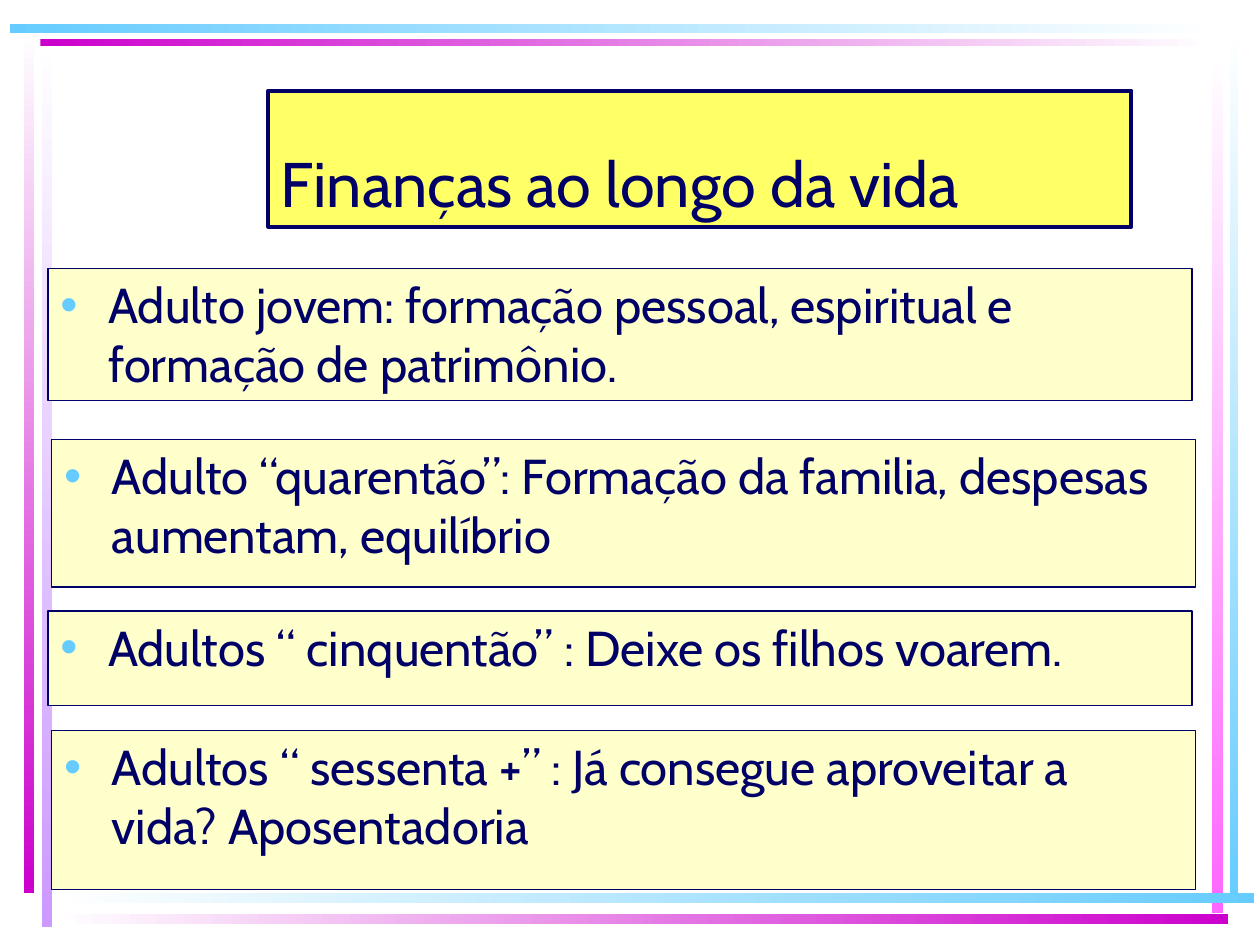
import pptx
import pptx.dml.color
import pptx.enum.shapes
import pptx.enum.text
import pptx.util
from lxml import etree
from pptx.oxml.ns import qn
from pptx.util import Inches

COLORS = {
    "text": "000066",
    "title_fill": "FFFF66",
    "box_fill": "FFFFCC",
    "sky": "66CCFF",
    "magenta": "CC00CC",
    "pink": "FF66FF",
    "lavender": "CC99FF",
    "white": "FFFFFF",
}
FONT = "Cabin"
DOWN, RIGHT = 270, 0

# left, top, width, height, gradient direction, start colour, end colour
BARS = [
    (0.33, 0.28, 0.08, 7.08, DOWN, "white", "lavender"),
    (0.19, 0.25, 0.08, 6.84, DOWN, "white", "magenta"),
    (9.76, 0.24, 0.07, 6.93, DOWN, "white", "sky"),
    (9.62, 0.42, 0.09, 6.83, DOWN, "white", "pink"),
    (0.45, 7.09, 9.5, 0.08, RIGHT, "white", "sky"),
    (0.45, 7.25, 9.3, 0.08, RIGHT, "white", "magenta"),
    (0.32, 0.31, 9.32, 0.06, RIGHT, "magenta", "white"),
    (0.08, 0.19, 9.56, 0.07, RIGHT, "sky", "white"),
]

TITLE_BOX = (2.13, 0.72, 6.85, 1.08)
STAGES = [
    ((0.38, 2.13, 9.08, 1.05),
     "Adulto jovem: formação pessoal, espiritual e formação de patrimônio."),
    ((0.41, 3.49, 9.08, 1.17),
     "Adulto “quarentão”: Formação da familia, despesas aumentam, equilíbrio"),
    ((0.38, 4.85, 9.08, 0.75),
     "Adultos “ cinquentão” : Deixe os filhos voarem."),
    ((0.41, 5.8, 9.08, 1.26),
     "Adultos “ sessenta +” : Já consegue aproveitar a vida? Aposentadoria"),
]


def rgb(name):
    return pptx.dml.color.RGBColor.from_string(COLORS[name])


def apply(target, values):
    for name, value in values.items():
        setattr(target, name, value)


def place(shape, box):
    names = ("left", "top", "width", "height")
    apply(shape, dict(zip(names, map(Inches, box))))


def add_frame_bar(slide, box, direction, start, end):
    bar = slide.shapes.add_shape(
        pptx.enum.shapes.MSO_SHAPE.RECTANGLE, *map(Inches, box))
    bar.shadow.inherit = False
    bar.line.fill.background()
    bar.fill.gradient()
    bar.fill.gradient_angle = direction
    for stop, position, color in zip(bar.fill.gradient_stops, (0, 1), (start, end)):
        stop.position = position
        stop.color.rgb = rgb(color)


def fill_panel(shape, box, text, fill, line_width, size, anchor):
    """Place a bordered text panel and return its only paragraph."""
    place(shape, box)
    shape.fill.solid()
    shape.fill.fore_color.rgb = rgb(fill)
    shape.line.color.rgb = rgb("text")
    shape.line.width = pptx.util.Pt(line_width)
    frame = shape.text_frame
    frame.text = text
    apply(frame, {
        "word_wrap": True,
        "auto_size": pptx.enum.text.MSO_AUTO_SIZE.NONE,
        "vertical_anchor": anchor,
    })
    paragraph = frame.paragraphs[0]
    paragraph.alignment = pptx.enum.text.PP_ALIGN.LEFT
    font = paragraph.runs[0].font
    apply(font, {"name": FONT, "size": pptx.util.Pt(size)})
    font.color.rgb = rgb("text")
    return paragraph


def add_bullet(paragraph):
    paragraph.space_before = pptx.util.Pt(5.6)
    properties = paragraph._p.get_or_add_pPr()
    properties.set("marL", str(Inches(0.38)))
    properties.set("indent", str(-Inches(0.38)))
    color = etree.SubElement(properties, qn("a:buClr"))
    etree.SubElement(color, qn("a:srgbClr"), val=COLORS["sky"])
    etree.SubElement(properties, qn("a:buFont"), typeface="Arial")
    etree.SubElement(properties, qn("a:buChar"), char="•")


def build_title(slide):
    fill_panel(slide.shapes.title, TITLE_BOX, "Finanças ao longo da vida",
               "title_fill", 2.25, 36, pptx.enum.text.MSO_ANCHOR.BOTTOM)


def build_stage(shape, box, text):
    paragraph = fill_panel(shape, box, text, "box_fill", 0.75, 28,
                           pptx.enum.text.MSO_ANCHOR.TOP)
    add_bullet(paragraph)


def main():
    presentation = pptx.Presentation()
    presentation.slide_width = Inches(10)
    presentation.slide_height = Inches(7.5)
    slide = presentation.slides.add_slide(presentation.slide_layouts[1])
    body = slide.placeholders[1]

    for *box, direction, start, end in BARS:
        add_frame_bar(slide, box, direction, start, end)
    # Bring the placeholders in front of the frame bars.
    for shape in (slide.shapes.title, body):
        slide.shapes.element.append(shape.element)

    build_title(slide)
    for index, (box, text) in enumerate(STAGES):
        shape = body if index == 0 else slide.shapes.add_textbox(*map(Inches, box))
        build_stage(shape, box, text)
    presentation.save("out.pptx")


if __name__ == "__main__":
    main()
